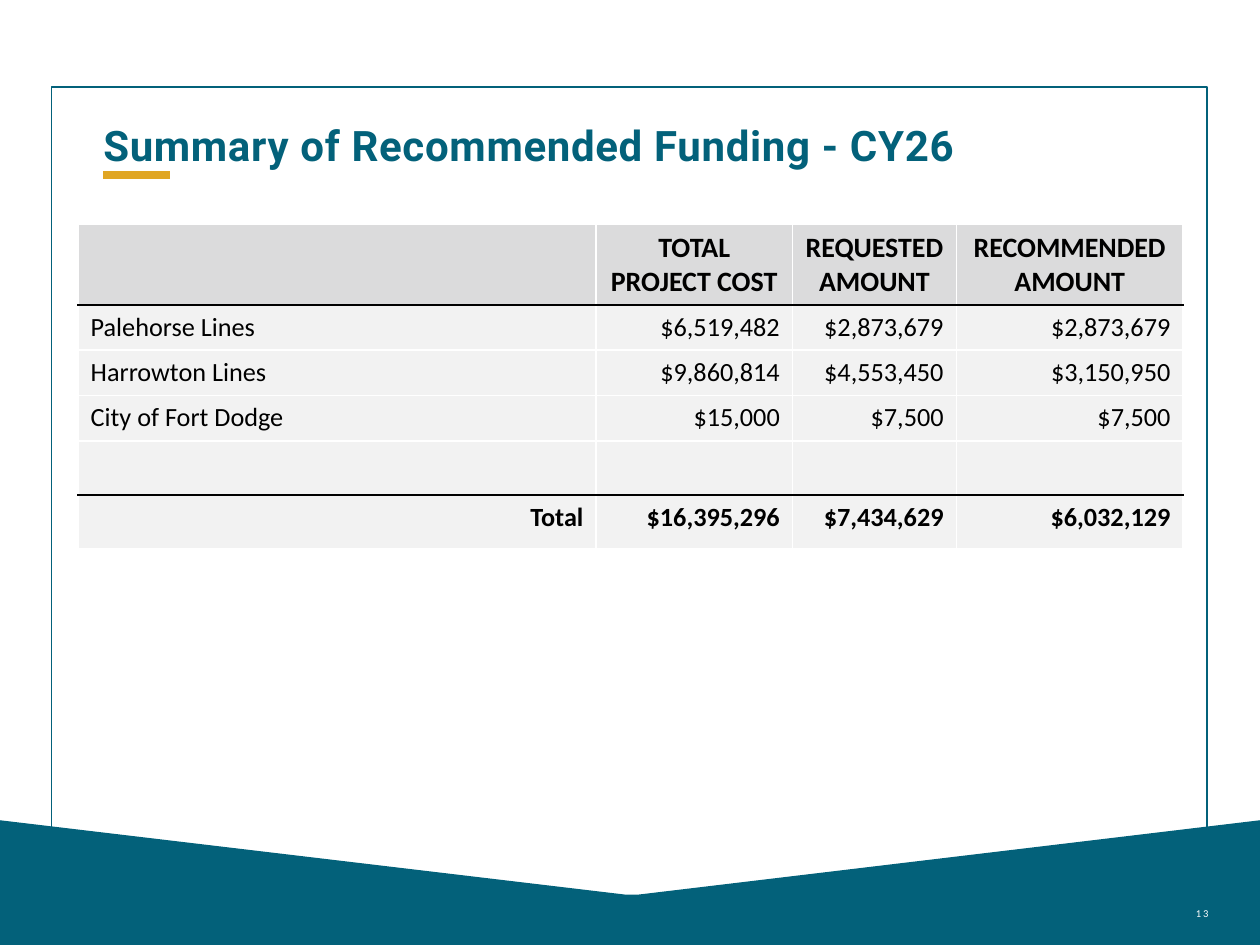
from pptx import Presentation
from pptx.util import Inches, Pt
from pptx.dml.color import RGBColor
from pptx.enum.shapes import MSO_CONNECTOR, MSO_SHAPE
from pptx.enum.text import MSO_ANCHOR, PP_ALIGN
from lxml import etree

LEFT, CENTER, RIGHT = PP_ALIGN.LEFT, PP_ALIGN.CENTER, PP_ALIGN.RIGHT
TOP, BOTTOM = MSO_ANCHOR.TOP, MSO_ANCHOR.BOTTOM
NS = "{http://schemas.openxmlformats.org/drawingml/2006/main}"
TEAL, GOLD, WHITE, BLACK = "03617A", "E0A624", "FFFFFF", "000000"
HEADER_GRAY, ROW_GRAY = "DBDBDC", "F2F2F2"


def rgb(value):
    return RGBColor.from_string(value)


def style(p, size, color, bold=False, name="Calibri", align=LEFT, spacing=0):
    p.alignment = align
    for r in p.runs:
        r.font.name = name
        r.font.size = Pt(size)
        r.font.bold = bold
        r.font.color.rgb = rgb(color)
        if spacing:
            r.font._element.set("spc", str(spacing))


prs = Presentation()
prs.slide_width, prs.slide_height = Inches(10), Inches(7.5)
s = prs.slides.add_slide(prs.slide_layouts[5])

outline = [(0, 6.51), (4.96, 7.1), (5.07, 7.1), (10, 6.51), (10, 7.5), (0, 7.5)]
points = [(Inches(x), Inches(y)) for x, y in outline]
builder = s.shapes.build_freeform(*points[0], scale=1.0)
builder.add_line_segments(points[1:], close=True)
band = builder.convert_to_shape()
band.shadow.inherit = False
band.fill.solid()
band.fill.fore_color.rgb = rgb(TEAL)
band.line.fill.background()

frame = s.shapes.add_shape(MSO_SHAPE.RECTANGLE, Inches(0.41), Inches(0.69), Inches(9.17), Inches(6.66))
frame.shadow.inherit = False
frame.fill.background()
frame.line.color.rgb = rgb(TEAL)
frame.line.width = Pt(1)

number = s.shapes.add_textbox(Inches(8.62), Inches(6.95), Inches(0.97), Inches(0.4))
tf = number.text_frame
tf.word_wrap = True
tf.vertical_anchor = BOTTOM
tf.margin_left = tf.margin_right = 0
tf.text = "13"
style(tf.paragraphs[0], 6, WHITE, align=RIGHT, spacing=110)

title = s.shapes.title
title.left, title.top, title.width, title.height = Inches(0.82), Inches(0.94), Inches(8.35), Inches(0.45)
tf = title.text_frame
tf.vertical_anchor = TOP
tf.margin_left = 0
tf.text = "Summary of Recommended Funding - CY26"
p = tf.paragraphs[0]
p.line_spacing = 0.9
style(p, 24, TEAL, bold=True, name="Roboto", spacing=40)

accent = s.shapes.add_connector(MSO_CONNECTOR.STRAIGHT, Inches(0.82), Inches(1.39), Inches(1.35), Inches(1.39))
accent.line.color.rgb = rgb(GOLD)
accent.line.width = Pt(4.5)
etree.SubElement(accent._element.spPr, NS + "effectLst")

rows = [
    ["", "TOTAL PROJECT COST", "REQUESTED AMOUNT", "RECOMMENDED AMOUNT"],
    ["Palehorse Lines", "$6,519,482", "$2,873,679", "$2,873,679"],
    ["Harrowton Lines", "$9,860,814", "$4,553,450", "$3,150,950"],
    ["City of Fort Dodge", "$15,000", "$7,500", "$7,500"],
    ["", "", "", ""],
    ["Total", "$16,395,296", "$7,434,629", "$6,032,129"],
]
widths = [4.11, 1.56, 1.3, 1.8]
heights = [0.64, 0.36, 0.36, 0.36, 0.43, 0.43]
total_row = len(rows) - 1
ruled_rows = (0, total_row - 1)

table = s.shapes.add_table(
    len(rows), len(widths), Inches(0.62), Inches(1.78), Inches(sum(widths)), Inches(sum(heights))
).table
table.first_row = table.horz_banding = False
for column, width in zip(table.columns, widths):
    column.width = Inches(width)
for i, (texts, height) in enumerate(zip(rows, heights)):
    table.rows[i].height = Inches(height)
    for j, text in enumerate(texts):
        cell = table.cell(i, j)
        borders = {
            "lnL": WHITE,
            "lnR": WHITE,
            "lnT": BLACK if i - 1 in ruled_rows else WHITE,
            "lnB": BLACK if i in ruled_rows else WHITE,
        }
        tc_pr = cell._tc.get_or_add_tcPr()
        for tag, color in borders.items():
            ln = etree.SubElement(tc_pr, NS + tag, w=str(Pt(1)))
            fill = etree.SubElement(ln, NS + "solidFill")
            etree.SubElement(fill, NS + "srgbClr", val=color)
        cell.fill.solid()
        cell.fill.fore_color.rgb = rgb(HEADER_GRAY if i == 0 else ROW_GRAY)
        cell.text_frame.text = text
        if i == 0:
            align = CENTER
        else:
            align = RIGHT if j > 0 or i == total_row else LEFT
        style(cell.text_frame.paragraphs[0], 16 if i == 0 else 15, BLACK, bold=i in (0, total_row), align=align)

prs.save("out.pptx")
